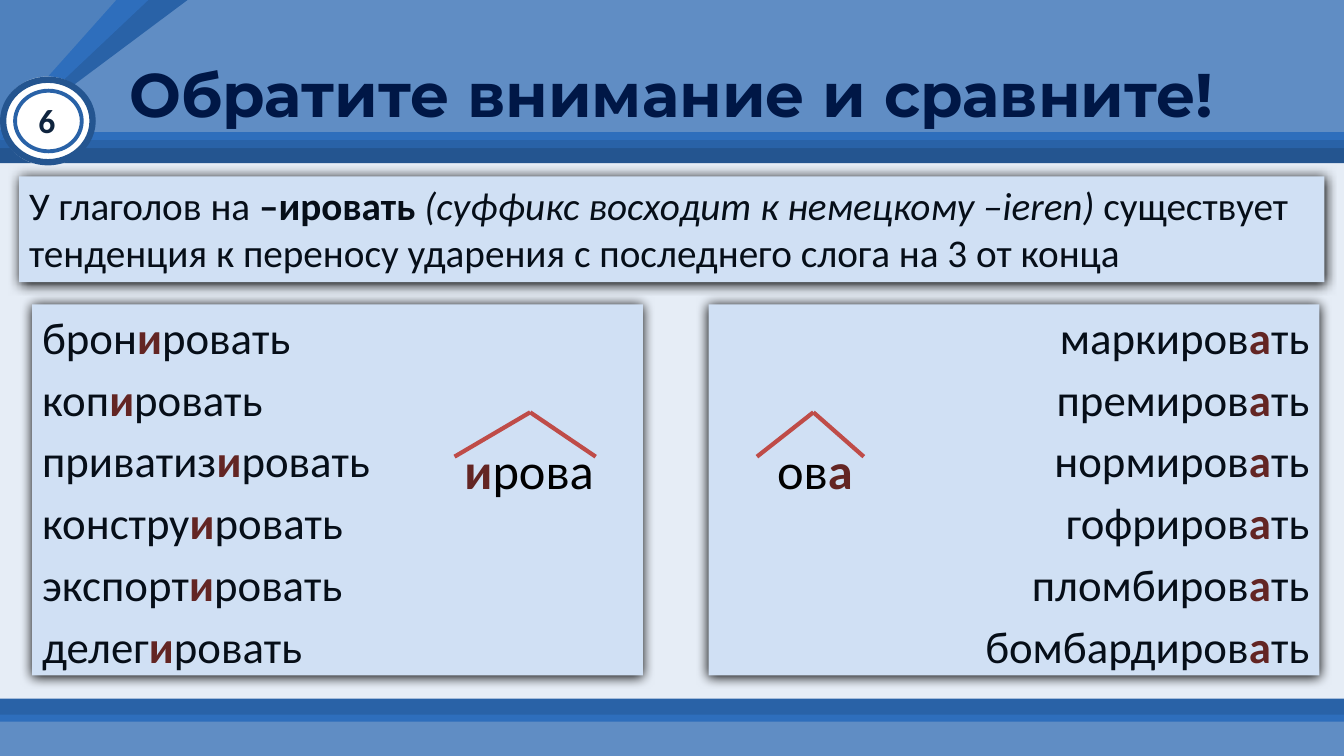
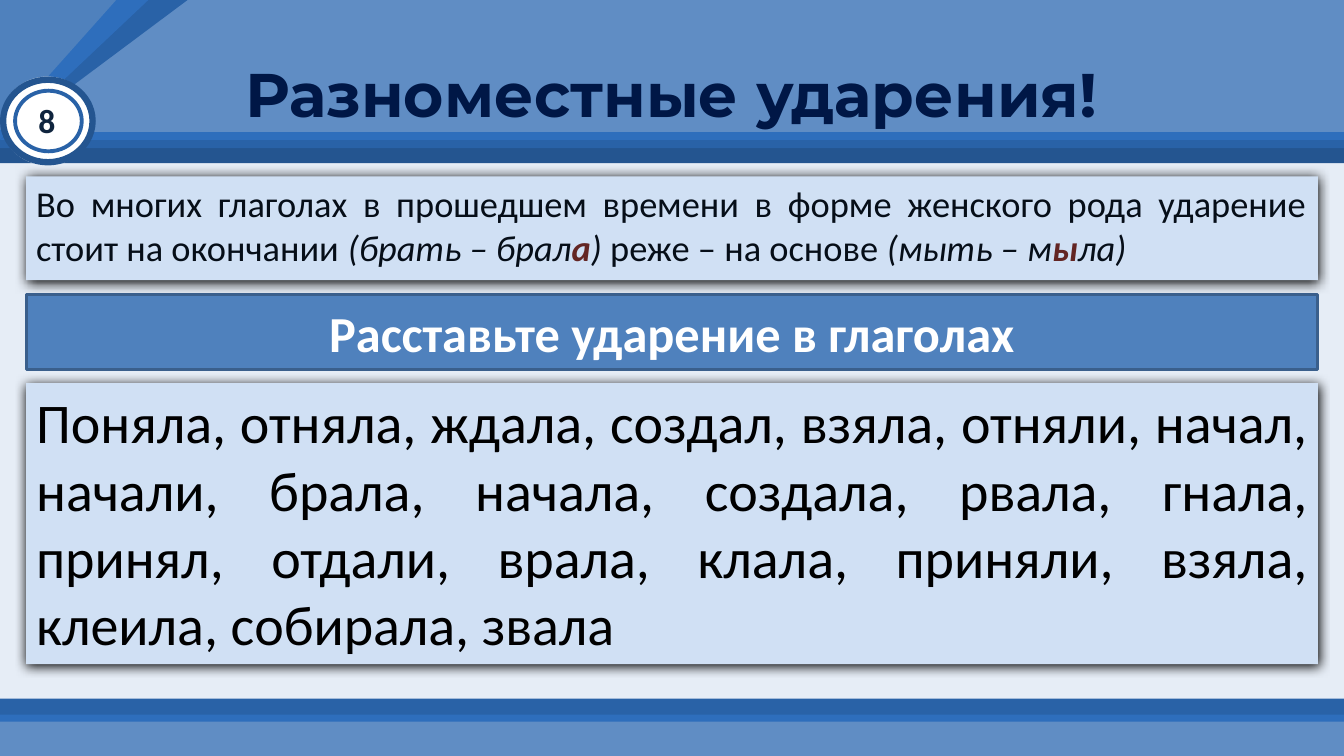
"""Build two slides on stress in Russian verbs."""
import lxml.etree
import pptx
import pptx.dml.color
import pptx.enum.shapes
import pptx.enum.text
import pptx.oxml
import pptx.oxml.ns
import pptx.util

Pt = pptx.util.Pt
RGB = pptx.dml.color.RGBColor
SHAPE = pptx.enum.shapes.MSO_SHAPE
ALIGN = pptx.enum.text.PP_ALIGN
ANCHOR = pptx.enum.text.MSO_ANCHOR
qn = pptx.oxml.ns.qn

PAGE = RGB(0xE6, 0xED, 0xF6)
DEEP = RGB(0x24, 0x55, 0x90)
DARK = RGB(0x29, 0x62, 0xA7)
BRIGHT = RGB(0x2E, 0x6E, 0xBC)
SOFT = RGB(0x60, 0x8D, 0xC4)
STEEL = RGB(0x4F, 0x81, 0xBD)
EDGE = RGB(0x3A, 0x5F, 0x8C)
PANEL = RGB(0xD0, 0xE0, 0xF4)
WHITE = RGB(0xFF, 0xFF, 0xFF)
BLACK = RGB(0, 0, 0)
NAVY = RGB(0x00, 0x17, 0x46)
INK = RGB(0x06, 0x0E, 0x18)
NUMBER = RGB(0x0F, 0x24, 0x3E)
STRESS = RGB(0x63, 0x25, 0x23)
ROOF = RGB(0xBF, 0x4C, 0x48)

WIDTH, HEIGHT = 960, 540
TITLE_BOX = (48, 21.6, 864, 90)
NUMBER_BOX = (13.7, 67.7, 39.6, 36)
DECORATION = [
    (SHAPE.RECTANGLE, (0, 0, WIDTH, 116.6), DEEP, None),
    (SHAPE.RECTANGLE, (0, 0, WIDTH, 105.8), DARK, None),
    (SHAPE.RECTANGLE, (0, 0, WIDTH, 100), BRIGHT, None),
    (SHAPE.RECTANGLE, (0, 0, WIDTH, 94.3), SOFT, None),
    (SHAPE.RECTANGLE, (0, 499, WIDTH, 37.4), DARK, None),
    (SHAPE.RECTANGLE, (0, 510.5, WIDTH, 26), BRIGHT, None),
    (SHAPE.RECTANGLE, (0, 515.5, WIDTH, 24.5), SOFT, None),
    (SHAPE.DIAGONAL_STRIPE, (0, 0, 134, 100), DARK, 0),
    (SHAPE.DIAGONAL_STRIPE, (0, 0, 106, 100), BRIGHT, 0),
    (SHAPE.DIAGONAL_STRIPE, (0, 0, 83, 93), STEEL, 0),
    (SHAPE.OVAL, (0.7, 54.7, 66.2, 63.4), WHITE, None),
    (SHAPE.DONUT, (0, 54.7, 68.4, 63.4), DEEP, 0.071),
    (SHAPE.DONUT, (9.4, 63.4, 50.4, 46.1), DARK, 0.06),
]

COL_TOP, COL_WIDTH, COL_HEIGHT = 217.4, 436.3, 265
SUFFIX_TOP, ROOF_TOP, ROOF_BASE = 310.3, 294.5, 326.2
WIDE_LEFT, WIDE_WIDTH = 18.7, 922.6


def pts(*values):
    """Turn numbers into point lengths."""
    return [Pt(v) for v in values]


def add_block(slide, kind, box, fill, adj=None):
    """Add a plain filled shape without outline or shadow."""
    sp = slide.shapes.add_shape(kind, *pts(*box))
    sp.shadow.inherit = False
    sp.fill.solid()
    sp.fill.fore_color.rgb = fill
    sp.line.fill.background()
    if adj is not None:
        sp.adjustments[0] = adj
    return sp


def write(sp, paragraphs, size, color, align=ALIGN.LEFT, bold=False, font="Calibri",
          anchor=ANCHOR.TOP, before=0, wrap=True):
    """Fill a shape with paragraphs of (text, marks): b bold, i italic, s stressed."""
    tf = sp.text_frame
    tf.word_wrap = wrap
    tf.auto_size = pptx.enum.text.MSO_AUTO_SIZE.NONE
    tf.vertical_anchor = anchor
    for i, runs in enumerate(paragraphs):
        p = tf.add_paragraph() if i else tf.paragraphs[0]
        p.alignment = align
        if i and before:
            p.space_before = Pt(before)
        p.font.name, p.font.size, p.font.bold = font, Pt(size), bold
        p.font.color.rgb = color
        for text, marks in runs:
            r = p.add_run()
            r.text = text
            if "b" in marks or "s" in marks:
                r.font.bold = True
            if "i" in marks:
                r.font.italic = True
            if "s" in marks:
                r.font.color.rgb = STRESS


def add_text(slide, box, runs, size, color, **style):
    """Add a one-paragraph text box."""
    write(slide.shapes.add_textbox(*pts(*box)), [runs], size, color, **style)


def add_panel(slide, box, paragraphs, size, color=INK, **style):
    """Add a pale text panel with a soft shadow."""
    sp = add_block(slide, SHAPE.RECTANGLE, box, PANEL)
    effects = sp.element.spPr.find(qn("a:effectLst"))
    shadow = lxml.etree.SubElement(effects, qn("a:outerShdw"), blurRad=str(Pt(8.5)),
                                   dist=str(Pt(1)), dir="5400000", algn="t", rotWithShape="0")
    lxml.etree.SubElement(shadow, qn("a:srgbClr"), val=str(BLACK))
    write(sp, paragraphs, size, color, **style)


def add_roof(slide, left, peak, right):
    """Draw the suffix mark as two lines meeting at a peak."""
    for x1, y1, x2, y2 in ((left, ROOF_BASE, peak, ROOF_TOP), (peak, ROOF_TOP, right, ROOF_BASE)):
        line = slide.shapes.add_connector(pptx.enum.shapes.MSO_CONNECTOR.STRAIGHT,
                                          *pts(x1, y1, x2, y2))
        line.line.color.rgb = ROOF
        line.line.width = Pt(3)
        lxml.etree.SubElement(line.element.spPr, qn("a:effectLst"))


def add_verbs(slide, left, stems, stressed, ending, align):
    """Add a column of verbs with the stressed vowel marked."""
    verbs = [[(stem, ""), (stressed, "s"), (ending, "")] for stem in stems]
    add_panel(slide, (left, COL_TOP, COL_WIDTH, COL_HEIGHT), verbs, 32, align=align, before=5.8)


def decorate(layout, slide):
    """Move the shared background, bands and badge into the layout."""
    layout.background.fill.solid()
    layout.background.fill.fore_color.rgb = PAGE
    for kind, box, fill, adj in DECORATION:
        sp = add_block(slide, kind, box, fill, adj)
        layout.shapes.element.append(sp.element)


def add_slide(prs, layout, title, number):
    """Add a slide with its title and number."""
    slide = prs.slides.add_slide(layout)
    sp = slide.shapes.title
    sp.left, sp.top, sp.width, sp.height = pts(*TITLE_BOX)
    write(sp, [[(title, "")]], 44, NAVY, align=ALIGN.CENTER, bold=True,
          font="Montserrat", anchor=ANCHOR.MIDDLE)
    add_text(slide, NUMBER_BOX, [(number, "")], 24, NUMBER, align=ALIGN.CENTER, bold=True)
    return slide


def fill_comparison(slide):
    """Compare the two stress patterns of verbs in -ировать."""
    add_panel(slide, (13.7, 126, 932.4, 75.6), [[
        ("У глаголов на ", ""), ("–ировать ", "b"),
        ("(суффикс восходит к немецкому –ieren) ", "i"),
        ("существует тенденция к переносу ударения с последнего слога на 3 от конца", ""),
    ]], 28)
    add_verbs(slide, 23, ["брон", "коп", "приватиз", "констру", "экспорт", "делег"],
              "и", "ровать", ALIGN.LEFT)
    add_verbs(slide, 506.2, ["маркиров", "премиров", "нормиров", "гофриров", "пломбиров",
                             "бомбардиров"], "а", "ть", ALIGN.RIGHT)
    add_text(slide, (324.7, SUFFIX_TOP, 108, 51), [("и", "s"), ("рова", "")], 36, BLACK, wrap=False)
    add_text(slide, (548, SUFFIX_TOP, 69, 51), [("ов", ""), ("а", "s")], 36, BLACK, wrap=False)
    add_roof(slide, 324.7, 378.7, 425.5)
    add_roof(slide, 540.7, 581, 617)


def fill_exercise(slide):
    """Give the past-tense rule and the verbs to mark."""
    add_panel(slide, (WIDE_LEFT, 126, WIDE_WIDTH, 74.2), [[
        ("Во многих глаголах в прошедшем времени в форме женского рода ударение "
         "стоит на окончании ", ""),
        ("(брать – брал", "i"), ("а", "is"), (")", "i"), (" реже – на основе ", ""),
        ("(мыть – м", "i"), ("ы", "is"), ("ла)", "i"),
    ]], 26, align=ALIGN.JUSTIFY)
    bar = add_block(slide, SHAPE.RECTANGLE, (WIDE_LEFT, 210.2, WIDE_WIDTH, 54), STEEL)
    bar.line.color.rgb = EDGE
    bar.line.width = Pt(2)
    write(bar, [[("Расставьте ударение в глаголах", "")]], 36, WHITE, align=ALIGN.CENTER,
          bold=True, anchor=ANCHOR.MIDDLE)
    add_panel(slide, (WIDE_LEFT, 273.6, WIDE_WIDTH, 200.9), [[
        ("Поняла, отняла, ждала, создал, взяла, отняли, начал, начали, брала, начала, "
         "создала, рвала, гнала, принял, отдали, врала, клала, приняли, взяла, клеила, "
         "собирала, звала", ""),
    ]], 40, BLACK, align=ALIGN.JUSTIFY)


def main():
    """Build and save the presentation."""
    prs = pptx.Presentation()
    prs.slide_width, prs.slide_height = pts(WIDTH, HEIGHT)
    layout = prs.slide_layouts.get_by_name("Title Only")
    comparison = add_slide(prs, layout, "Обратите внимание и сравните!", "6")
    decorate(layout, comparison)
    fill_comparison(comparison)
    fill_exercise(add_slide(prs, layout, "Разноместные ударения!", "8"))
    prs.save("out.pptx")


if __name__ == "__main__":
    main()
